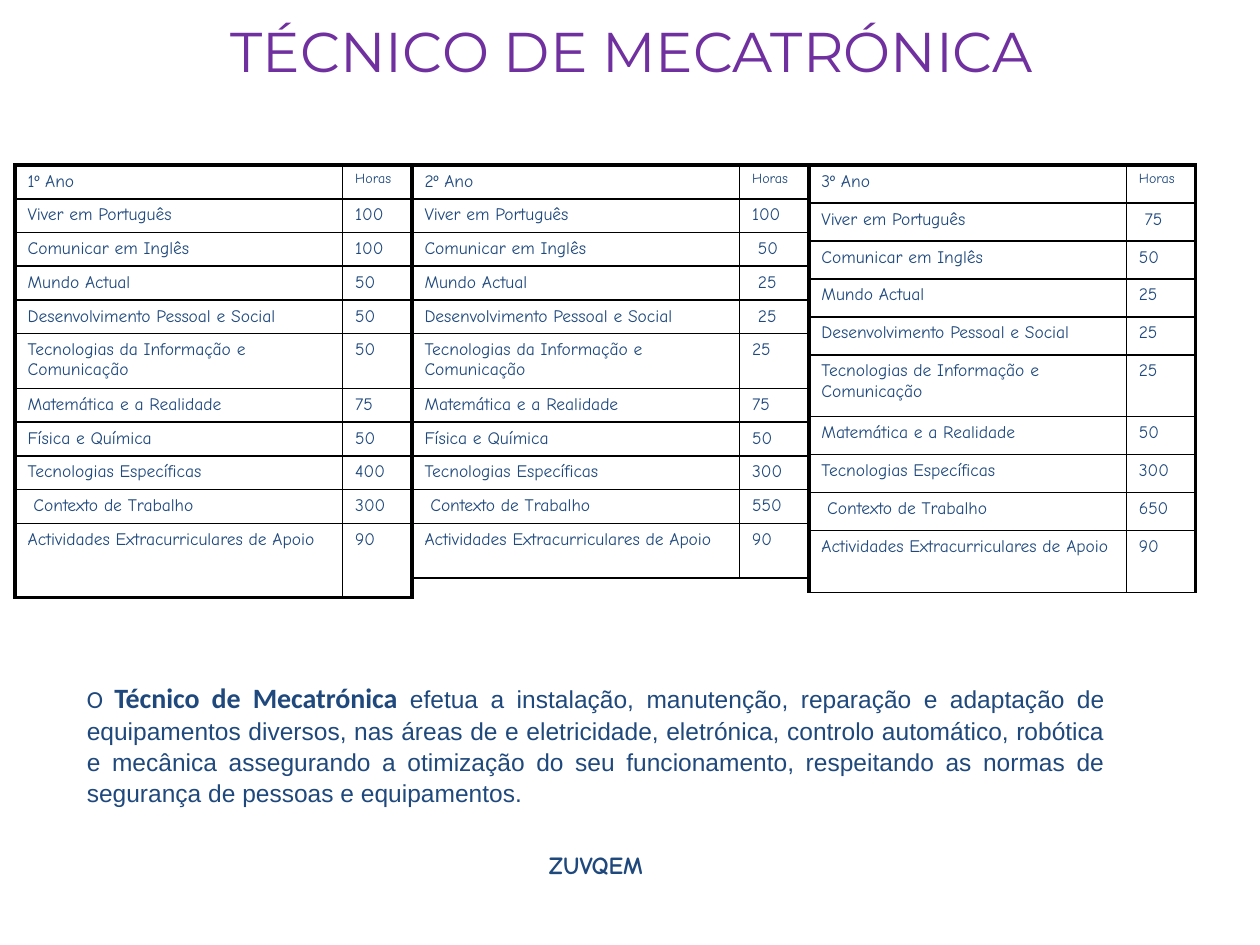
import lxml.etree
import pptx
import pptx.dml.color
import pptx.enum.text
import pptx.oxml.ns
import pptx.util

Pt = pptx.util.Pt
ALIGN = pptx.enum.text.PP_ALIGN
COLORS = {"title": "7030A0", "text": "1F497D", "border": "000000"}
THICK, THIN = 2.25, 1
HOURS_WIDTH = 39.6
TABLE_TOP = 94.3


def add_run(paragraph, text, font, size, color="text", bold=False):
    run = paragraph.add_run()
    run.text = text
    run.font.name = font
    run.font.size = Pt(size)
    run.font.bold = bold
    run.font.color.rgb = pptx.dml.color.RGBColor.from_string(COLORS[color])


def set_borders(cell, widths):
    """Draw the cell's left, right, top and bottom lines, widths in points."""
    properties = cell._tc.get_or_add_tcPr()
    for side, width in zip("LRTB", widths):
        line = lxml.etree.SubElement(
            properties, pptx.oxml.ns.qn(f"a:ln{side}"), w=str(int(Pt(width))))
        fill = lxml.etree.SubElement(line, pptx.oxml.ns.qn("a:solidFill"))
        lxml.etree.SubElement(
            fill, pptx.oxml.ns.qn("a:srgbClr"), val=COLORS["border"])


presentation = pptx.Presentation()
presentation.slide_width, presentation.slide_height = Pt(720), Pt(540)
slide = presentation.slides.add_slide(presentation.slide_layouts[5])

title = slide.shapes.title
title.left, title.top, title.width, title.height = Pt(18), Pt(5.8), Pt(686), Pt(60.5)
title.text_frame.vertical_anchor = pptx.enum.text.MSO_ANCHOR.TOP
title.text_frame.paragraphs[0].alignment = ALIGN.CENTER
add_run(title.text_frame.paragraphs[0], "TÉCNICO DE MECATRÓNICA",
        "Montserrat", 32, "title")

description = slide.shapes.add_textbox(Pt(42.5), Pt(384.2), Pt(596.2), Pt(120))
description.text_frame.word_wrap = True
paragraph = description.text_frame.paragraphs[0]
paragraph.alignment = ALIGN.JUSTIFY
paragraph.line_spacing = 1.06
add_run(paragraph, "O ", "Calibri", 14)
add_run(paragraph, "Técnico de Mecatrónica ", "Calibri", 16, bold=True)
add_run(paragraph,
        "efetua a instalação, manutenção, reparação e adaptação de equipamentos "
        "diversos, nas áreas de e eletricidade, eletrónica, controlo automático, "
        "robótica e mecânica assegurando a otimização do seu funcionamento, "
        "respeitando as normas de segurança de pessoas e equipamentos.",
        "Arial", 14)
paragraph = description.text_frame.add_paragraph()
paragraph.alignment = ALIGN.CENTER
paragraph.space_before = Pt(24)
add_run(paragraph, "ZUVQEM", "Comic Neue", 14, bold=True)

subjects = [
    "Viver em Português", "Comunicar em Inglês", "Mundo Actual",
    "Desenvolvimento Pessoal e Social", "Tecnologias da Informação e Comunicação",
    "Matemática e a Realidade", "Física e Química", "Tecnologias Específicas",
    " Contexto de Trabalho", "Actividades Extracurriculares de Apoio",
]
third_year_subjects = [
    subject.replace("da Informação", "de Informação")
    for subject in subjects if subject != "Física e Química"
]
# heading, left, subject width, row height, tall row, last row, bottom line
years = [
    ("1º Ano", 8.6, 187.2, 19.3, 31.2, 42.3, THICK, subjects,
     ["100", "100", "50", "50", "50", "75", "50", "400", "300", "90"]),
    ("2º Ano", 235.4, 187.2, 19.3, 31.2, 31.2, THIN, subjects,
     ["100", " 50", " 25", " 25", "25", "75", "50", "300", "550", "90"]),
    ("3º Ano", 462.2, 181.4, 21.7, 35.4, 35.4, THIN, third_year_subjects,
     [" 75", "50", "25", "25", "25", "50", "300", "650", "90"]),
]

for heading, left, width, height, tall, last, bottom, names, hours in years:
    rows = [(heading, "Horas"), *zip(names, hours)]
    heights = [height] * len(rows)
    heights[5], heights[-1] = tall, last
    table = slide.shapes.add_table(
        len(rows), 2, Pt(left), Pt(TABLE_TOP), Pt(width + HOURS_WIDTH),
        Pt(sum(heights))).table
    table.first_row = table.horz_banding = False
    table.columns[0].width, table.columns[1].width = Pt(width), Pt(HOURS_WIDTH)
    for row_index, texts in enumerate(rows):
        table.rows[row_index].height = Pt(heights[row_index])
        top_line = THICK if row_index == 0 else THIN
        bottom_line = bottom if row_index == len(rows) - 1 else THIN
        for column_index, text in enumerate(texts):
            cell = table.cell(row_index, column_index)
            side_lines = (THIN, THICK) if column_index else (THICK, THIN)
            set_borders(cell, (*side_lines, top_line, bottom_line))
            cell.fill.background()
            add_run(cell.text_frame.paragraphs[0], text, "Comic Neue",
                    8 if text == "Horas" else 10)

presentation.save("out.pptx")
